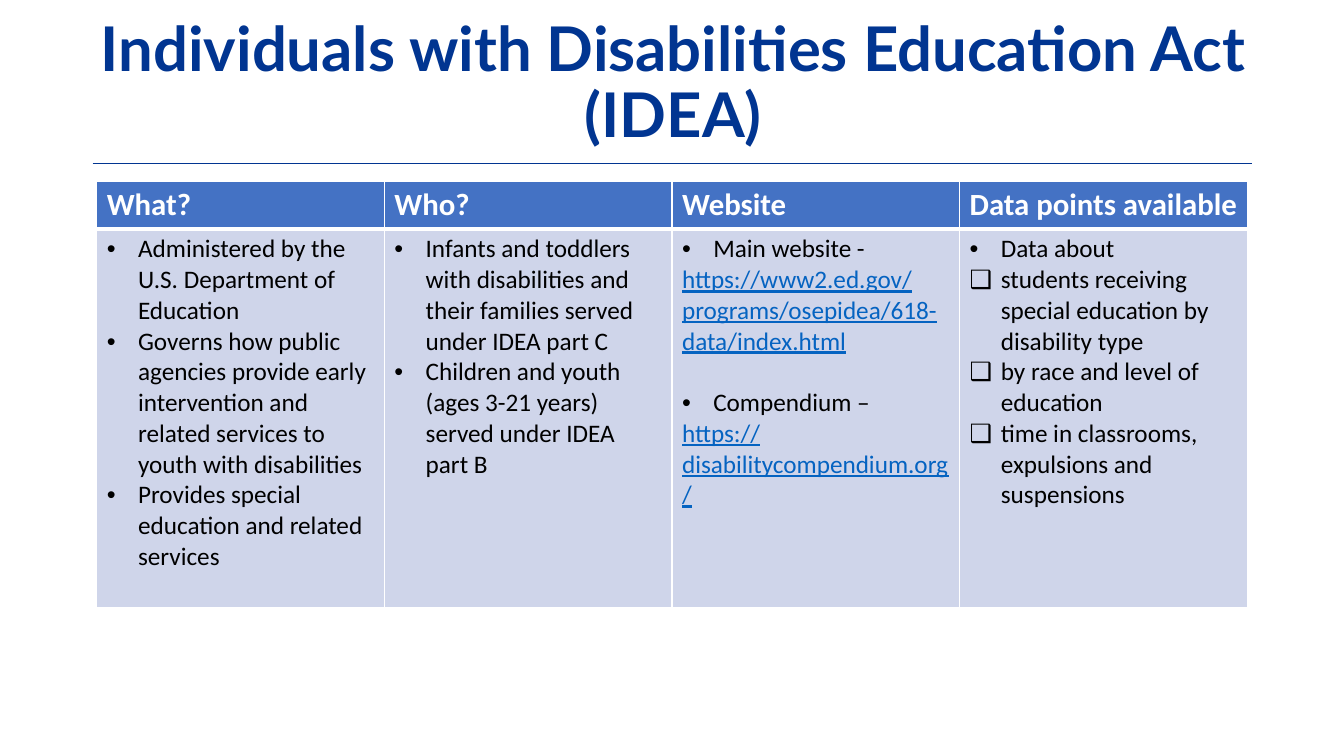
from dataclasses import dataclass

from lxml import etree
from pptx import Presentation
from pptx import util as u
from pptx.dml.color import RGBColor
from pptx.enum import shapes, text
from pptx.oxml import ns

COLORS = {
    "navy": "013591",
    "header": "4472C4",
    "body": "CFD5EA",
    "white": "FFFFFF",
    "black": "000000",
    "address": "0563C1",
}
INDENT = u.Inches(0.31)


@dataclass(frozen=True)
class Entry:
    words: str
    bullet: str = "•"
    color: str = "black"
    underline: bool = False
    gap_before: float = 0


@dataclass(frozen=True)
class Topic:
    heading: str
    entries: list[Entry]


def address(words: str) -> Entry:
    return Entry(words, bullet="", color="address", underline=True)


TOPICS = [
    Topic("What?", [
        Entry("Administered by the U.S. Department of Education"),
        Entry("Governs how public agencies provide early intervention "
              "and related services to youth with disabilities"),
        Entry("Provides special education and related services"),
    ]),
    Topic("Who?", [
        Entry("Infants and toddlers with disabilities and their families "
              "served under IDEA part C"),
        Entry("Children and youth (ages 3-21 years) served under IDEA part B"),
    ]),
    Topic("Website", [
        Entry("Main website -"),
        address("https://www2.ed.gov/programs/osepidea/618-data/index.html"),
        Entry("Compendium –", gap_before=22),
        address("https://disabilitycompendium.org/"),
    ]),
    Topic("Data points available", [
        Entry("Data about"),
        Entry("students receiving special education by disability type", "❑"),
        Entry("by race and level of education", "❑"),
        Entry("time in classrooms, expulsions and suspensions", "❑"),
    ]),
]


def rgb(color: str) -> RGBColor:
    return RGBColor.from_string(COLORS[color])


def add_run(paragraph, words: str, size: float, color: str,
            font: str = "Calibri", bold: bool = False, underline: bool = False) -> None:
    run = paragraph.add_run()
    run.text = words
    run.font.name = font
    run.font.size = u.Pt(size)
    run.font.bold = bold
    run.font.underline = underline
    run.font.color.rgb = rgb(color)


def set_bullet(paragraph, symbol: str) -> None:
    properties = paragraph._p.get_or_add_pPr()
    properties.set("marL", str(INDENT))
    properties.set("indent", str(-INDENT))
    etree.SubElement(properties, ns.qn("a:buFont"), typeface="Arial")
    etree.SubElement(properties, ns.qn("a:buChar"), char=symbol)


def style_cell(cell, fill: str, bottom_width: float) -> None:
    cell.fill.solid()
    cell.fill.fore_color.rgb = rgb(fill)
    widths = {"a:lnL": 1, "a:lnR": 1, "a:lnT": 1, "a:lnB": bottom_width}
    for position, (side, width) in enumerate(widths.items()):
        border = etree.Element(ns.qn(side), w=str(u.Pt(width)))
        solid = etree.SubElement(border, ns.qn("a:solidFill"))
        etree.SubElement(solid, ns.qn("a:srgbClr"), val=COLORS["white"])
        cell._tc.get_or_add_tcPr().insert(position, border)


def fill_entries(frame, entries: list[Entry]) -> None:
    for number, entry in enumerate(entries):
        paragraph = frame.add_paragraph() if number else frame.paragraphs[0]
        if entry.gap_before:
            paragraph.space_before = u.Pt(entry.gap_before)
        if entry.bullet:
            set_bullet(paragraph, entry.bullet)
        add_run(paragraph, entry.words, 18, entry.color, underline=entry.underline)


def add_title(slide) -> None:
    title = slide.shapes.add_textbox(
        u.Inches(0.89), u.Inches(0.13), u.Inches(11.58), u.Inches(1.42)).text_frame
    title.word_wrap = True
    title.vertical_anchor = text.MSO_ANCHOR.BOTTOM
    paragraph = title.paragraphs[0]
    paragraph.alignment = text.PP_ALIGN.CENTER
    paragraph.line_spacing = 0.9
    add_run(paragraph, "Individuals with Disabilities Education Act (IDEA)",
            44, "navy", font="Lato", bold=True)


def add_title_rule(slide) -> None:
    rule = slide.shapes.add_connector(
        shapes.MSO_CONNECTOR.STRAIGHT,
        u.Inches(0.92), u.Inches(1.62), u.Inches(12.42), u.Inches(1.62))
    rule.line.color.rgb = rgb("navy")
    rule.line.width = u.Pt(1)
    etree.SubElement(rule._element.spPr, ns.qn("a:effectLst"))


def add_topics(slide, topics: list[Topic]) -> None:
    table = slide.shapes.add_table(
        2, len(topics), u.Inches(0.96), u.Inches(1.8),
        u.Inches(11.41), u.Inches(4.23)).table
    table.horz_banding = False
    table.rows[0].height = u.Inches(0.47)
    table.rows[1].height = u.Inches(3.76)
    for column, topic in enumerate(topics):
        heading, details = table.cell(0, column), table.cell(1, column)
        style_cell(heading, "header", bottom_width=3)
        style_cell(details, "body", bottom_width=1)
        add_run(heading.text_frame.paragraphs[0], topic.heading, 22, "white", bold=True)
        fill_entries(details.text_frame, topic.entries)


def main() -> None:
    deck = Presentation()
    deck.slide_width, deck.slide_height = u.Inches(13.33), u.Inches(7.5)
    slide = deck.slides.add_slide(deck.slide_layouts[6])

    # Heading and the rule beneath it
    add_title_rule(slide)
    add_title(slide)

    # Overview of the act, one topic per column
    add_topics(slide, TOPICS)

    deck.save("out.pptx")


if __name__ == "__main__":
    main()
